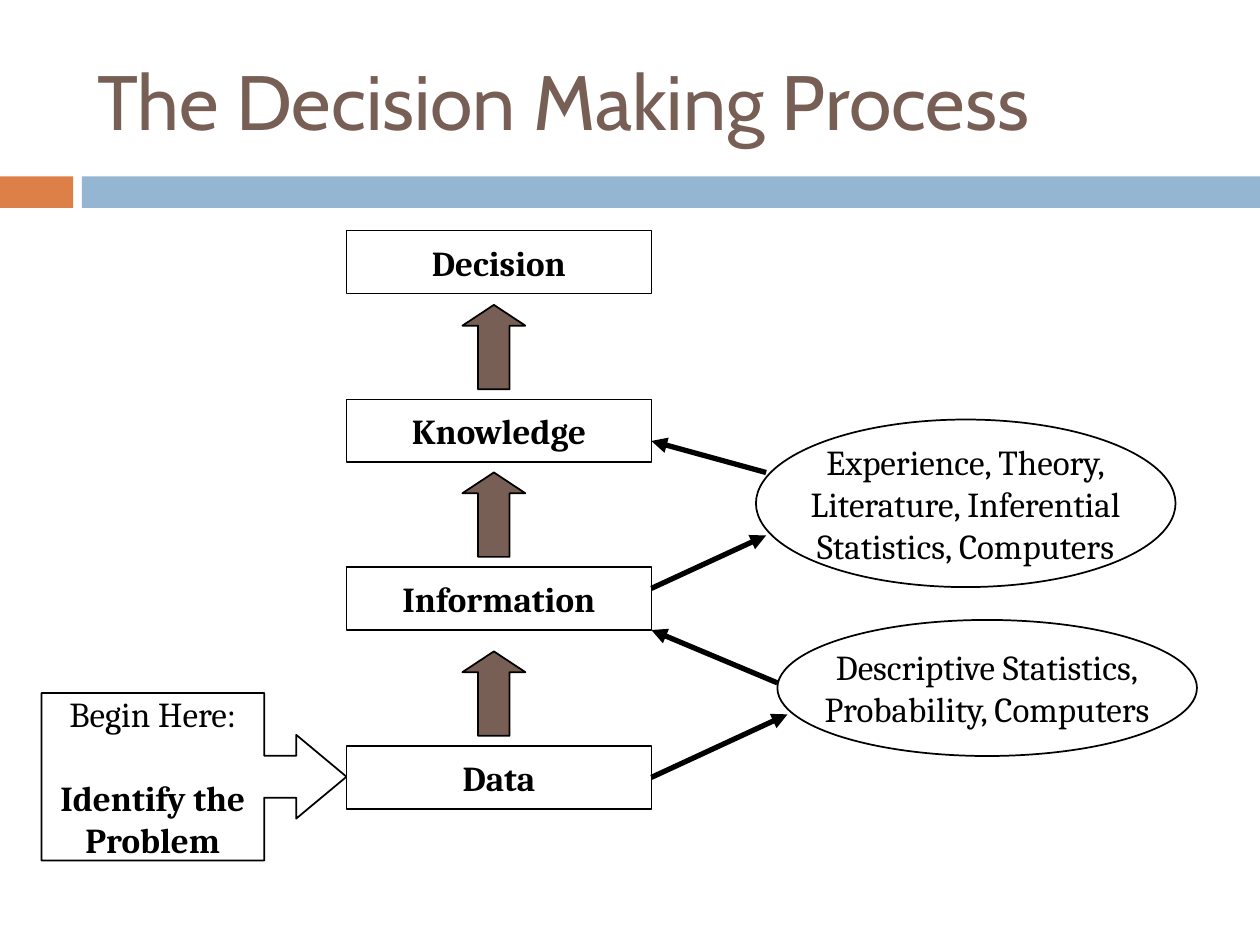
from dataclasses import dataclass

from lxml import etree
from pptx import Presentation
from pptx.dml.color import RGBColor
from pptx.enum.shapes import MSO_CONNECTOR, MSO_SHAPE
from pptx.enum.text import MSO_ANCHOR, PP_ALIGN
from pptx.oxml.ns import qn
from pptx.util import Inches, Pt

RECTANGLE = MSO_SHAPE.RECTANGLE
ELLIPSE = MSO_SHAPE.OVAL
UP_ARROW = MSO_SHAPE.UP_ARROW
CALLOUT = MSO_SHAPE.RIGHT_ARROW_CALLOUT
STRAIGHT = MSO_CONNECTOR.STRAIGHT
MIDDLE = MSO_ANCHOR.MIDDLE
CENTER, LEFT = PP_ALIGN.CENTER, PP_ALIGN.LEFT


@dataclass(frozen=True)
class Theme:
    brown: str = "775F55"
    orange: str = "DD8047"
    blue: str = "94B6D2"
    white: str = "FFFFFF"
    black: str = "000000"
    title_font: str = "Cabin"
    body_font: str = "Cambria"
    title_size: int = 44
    body_size: int = 20
    outline: int = 1
    arrow: int = 3


def write_text(paragraph, text, *, font, size, color, bold=False, align=CENTER, before=0):
    paragraph.alignment = align
    if before:
        paragraph.space_before = Pt(before)
    run = paragraph.add_run()
    run.text = text
    run.font.name = font
    run.font.size = Pt(size)
    run.font.bold = bold
    run.font.color.rgb = RGBColor.from_string(color)


class ProcessSlide:
    """Draw the elements of a process diagram on one slide in one theme."""

    def __init__(self, slide, theme):
        self.slide = slide
        self.theme = theme

    def title(self, text, left, top, width, height):
        shape = self.slide.shapes.title
        shape.left, shape.top = Inches(left), Inches(top)
        shape.width, shape.height = Inches(width), Inches(height)
        shape.text_frame.vertical_anchor = MIDDLE
        write_text(shape.text_frame.paragraphs[0], text, font=self.theme.title_font,
                   size=self.theme.title_size, color=self.theme.brown, align=LEFT)

    def shape(self, kind, left, top, width, height, fill, outlined=True):
        shape = self.slide.shapes.add_shape(
            kind, Inches(left), Inches(top), Inches(width), Inches(height))
        shape.shadow.inherit = False
        shape.fill.solid()
        shape.fill.fore_color.rgb = RGBColor.from_string(fill)
        if outlined:
            shape.line.color.rgb = RGBColor.from_string(self.theme.black)
            shape.line.width = Pt(self.theme.outline)
        else:
            shape.line.fill.background()
        return shape

    def label(self, kind, left, top, width, height, lines):
        shape = self.shape(kind, left, top, width, height, self.theme.white)
        frame = shape.text_frame
        frame.word_wrap = False
        frame.vertical_anchor = MIDDLE
        for index, (text, options) in enumerate(lines):
            paragraph = frame.add_paragraph() if index else frame.paragraphs[0]
            write_text(paragraph, text, font=self.theme.body_font,
                       size=self.theme.body_size, color=self.theme.black, **options)
        return shape

    def up_arrow(self, left, top, width, height):
        shape = self.shape(UP_ARROW, left, top, width, height, self.theme.brown)
        shape.adjustments[1] = 0.33

    def arrow(self, start, end):
        connector = self.slide.shapes.add_connector(
            STRAIGHT, *(Inches(value) for value in (*start, *end)))
        connector.line.color.rgb = RGBColor.from_string(self.theme.black)
        connector.line.width = Pt(self.theme.arrow)
        etree.SubElement(connector.line._get_or_add_ln(), qn("a:tailEnd"), type="triangle")
        etree.SubElement(connector._element.spPr, qn("a:effectLst"))


def main():
    presentation = Presentation()
    presentation.slide_width, presentation.slide_height = Inches(10), Inches(7.5)
    theme = Theme()
    slide = presentation.slides.add_slide(presentation.slide_layouts[5])
    process = ProcessSlide(slide, theme)

    process.shape(RECTANGLE, 0, 1.4, 0.58, 0.25, theme.orange, outlined=False)
    process.shape(RECTANGLE, 0.65, 1.4, 9.35, 0.25, theme.blue, outlined=False)
    process.title("The Decision Making Process", 0.67, 0.25, 8.92, 1.08)

    callout = process.label(CALLOUT, 0.33, 5.5, 2.42, 1.33, [
        ("Begin Here:", {}),
        ("Identify the", {"bold": True, "before": 24}),
        ("Problem", {"bold": True}),
    ])
    for index, value in enumerate((0.25, 0.25, 0.3, 0.73)):
        callout.adjustments[index] = value

    stages = {"Data": 5.92, "Information": 4.5, "Knowledge": 3.17, "Decision": 1.83}
    for name, top in stages.items():
        process.label(RECTANGLE, 2.75, top, 2.42, 0.5, [(name, {"bold": True})])
    for top in list(stages.values())[:-1]:
        process.up_arrow(3.67, top - 0.75, 0.5, 0.67)

    tools = [
        (6.17, 4.92, 1.08, ("Descriptive Statistics,", "Probability, Computers")),
        (6, 3.33, 1.33, ("Experience, Theory,", "Literature, Inferential",
                         "Statistics, Computers")),
    ]
    for left, top, height, lines in tools:
        process.label(ELLIPSE, left, top, 3.33, height, [(line, {}) for line in lines])

    arrows = [
        ((5.17, 6.17), (6.25, 5.67)),
        ((6.17, 5.42), (5.17, 5)),
        ((5.17, 4.67), (6.08, 4.25)),
        ((6.08, 3.75), (5.17, 3.5)),
    ]
    for start, end in arrows:
        process.arrow(start, end)

    presentation.save("out.pptx")


if __name__ == "__main__":
    main()
